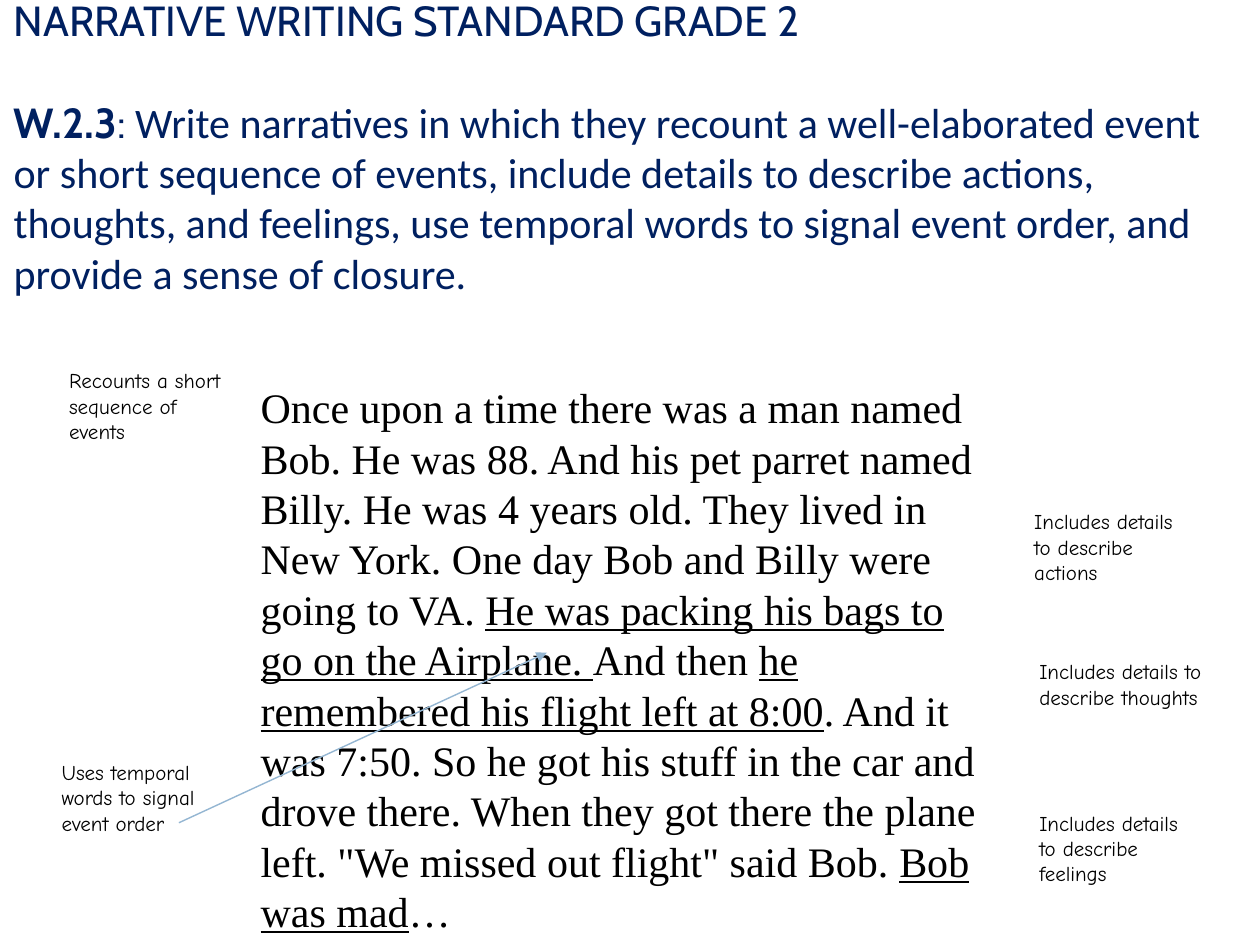
"""Build the grade 2 narrative writing standard slide with an annotated sample."""
from dataclasses import dataclass

from lxml.etree import SubElement
from pptx import Presentation
from pptx.dml.color import RGBColor
from pptx.enum.shapes import MSO_CONNECTOR, MSO_SHAPE
from pptx.enum.text import MSO_ANCHOR, MSO_AUTO_SIZE, PP_ALIGN
from pptx.oxml.ns import qn
from pptx.util import Inches, Pt


@dataclass(frozen=True)
class Theme:
    navy: RGBColor = RGBColor(0x00, 0x20, 0x60)
    black: RGBColor = RGBColor(0x00, 0x00, 0x00)
    white: RGBColor = RGBColor(0xFF, 0xFF, 0xFF)
    arrow: RGBColor = RGBColor(0x94, 0xB6, 0xD2)
    body_size: Pt = Pt(24)
    note_size: Pt = Pt(12)
    title_font: str = "Cabin"
    standard_font: str = "Calibri"
    story_font: str = "Times New Roman"
    note_font: str = "Comic Neue"


@dataclass(frozen=True)
class Box:
    left: float
    top: float
    width: float
    height: float

    def emu(self) -> list:
        return [Inches(v) for v in (self.left, self.top, self.width, self.height)]


@dataclass(frozen=True)
class Note:
    text: str
    box: Box


THEME = Theme()

STORY = [
    ("Once upon a time there was a man named Bob. He was 88. And his pet parret "
     "named Billy. He was 4 years old. They lived in New York. One day Bob and "
     "Billy were going to VA. ", False),
    ("He was packing his bags to go on the Airplane. ", True),
    ("And then ", False),
    ("he remembered his flight left at 8:00", True),
    (". And it was 7:50. So he got his stuff in the car and drove there. When they "
     "got there the plane left. \"We missed out flight\" said Bob. ", False),
    ("Bob was mad", True),
    ("…", False),
]

NOTES = [
    Note("Includes details to describe actions", Box(8.11, 3.99, 1.41, 1.07)),
    Note("Recounts a short sequence of events", Box(0.45, 2.87, 1.52, 0.65)),
    Note("Includes details to describe thoughts", Box(8.15, 5.18, 1.65, 0.83)),
    Note("Includes details to describe feelings", Box(8.15, 6.38, 1.38, 1.12)),
    Note("Uses temporal words to signal event order", Box(0.39, 5.98, 1.49, 1.25)),
]


def add_run(p, text: str, color: RGBColor, **fmt) -> None:
    r = p.add_run()
    r.text = text
    r.font.color.rgb = color
    for name, value in fmt.items():
        setattr(r.font, name, value)


def add_text_box(s, box: Box):
    tf = s.shapes.add_textbox(*box.emu()).text_frame
    tf.word_wrap = True
    return tf


def add_story(s) -> None:
    p = add_text_box(s, Box(1.97, 2.98, 6, 4.16)).paragraphs[0]
    p.space_before = Pt(7)
    for text, underline in STORY:
        add_run(p, text, THEME.black, name=THEME.story_font,
                size=THEME.body_size, underline=underline)


def add_note(s, note: Note) -> None:
    sp = s.shapes.add_shape(MSO_SHAPE.RECTANGLE, *note.box.emu())
    sp.shadow.inherit = False
    sp.fill.solid()
    sp.fill.fore_color.rgb = THEME.white
    sp.line.color.rgb = THEME.white
    sp.line.width = Pt(0.75)
    tf = sp.text_frame
    tf.word_wrap = True
    tf.vertical_anchor = MSO_ANCHOR.TOP
    p = tf.paragraphs[0]
    p.alignment = PP_ALIGN.LEFT
    p.space_after = Pt(8)
    add_run(p, note.text, THEME.black, name=THEME.note_font, size=THEME.note_size)


def add_standard(s) -> None:
    tf = add_text_box(s, Box(0.01, -0.09, 9.67, 2.52))
    tf.auto_size = MSO_AUTO_SIZE.SHAPE_TO_FIT_TEXT
    title = {"name": THEME.title_font, "size": THEME.body_size}
    add_run(tf.paragraphs[0], "NARRATIVE WRITING STANDARD GRADE 2", THEME.navy, **title)
    p = tf.add_paragraph()
    p.space_before = Pt(29)
    add_run(p, "W.2.3", THEME.navy, bold=True, **title)
    add_run(p, ": ", THEME.navy, **title)
    add_run(p, "Write narratives in which they recount a well-elaborated event or short "
            "sequence of events, include details to describe actions, thoughts, and "
            "feelings, use temporal words to signal event order, and provide a sense "
            "of closure.", THEME.navy, name=THEME.standard_font, size=THEME.body_size)


def add_arrow(s, start: tuple[float, float], end: tuple[float, float]) -> None:
    points = [Inches(v) for v in (*start, *end)]
    cxn = s.shapes.add_connector(MSO_CONNECTOR.STRAIGHT, *points)
    cxn.line.color.rgb = THEME.arrow
    cxn.line.width = Pt(0.79)
    SubElement(cxn.line._get_or_add_ln(), qn("a:tailEnd"), type="triangle")
    SubElement(cxn._element.spPr, qn("a:effectLst"))


def main() -> None:
    prs = Presentation()
    prs.slide_width, prs.slide_height = Inches(10), Inches(7.5)
    s = prs.slides.add_slide(prs.slide_layouts[6])
    add_story(s)
    for note in NOTES:
        add_note(s, note)
    add_standard(s)
    add_arrow(s, (1.42, 6.53), (4.34, 5.18))
    prs.save("out.pptx")


if __name__ == "__main__":
    main()
